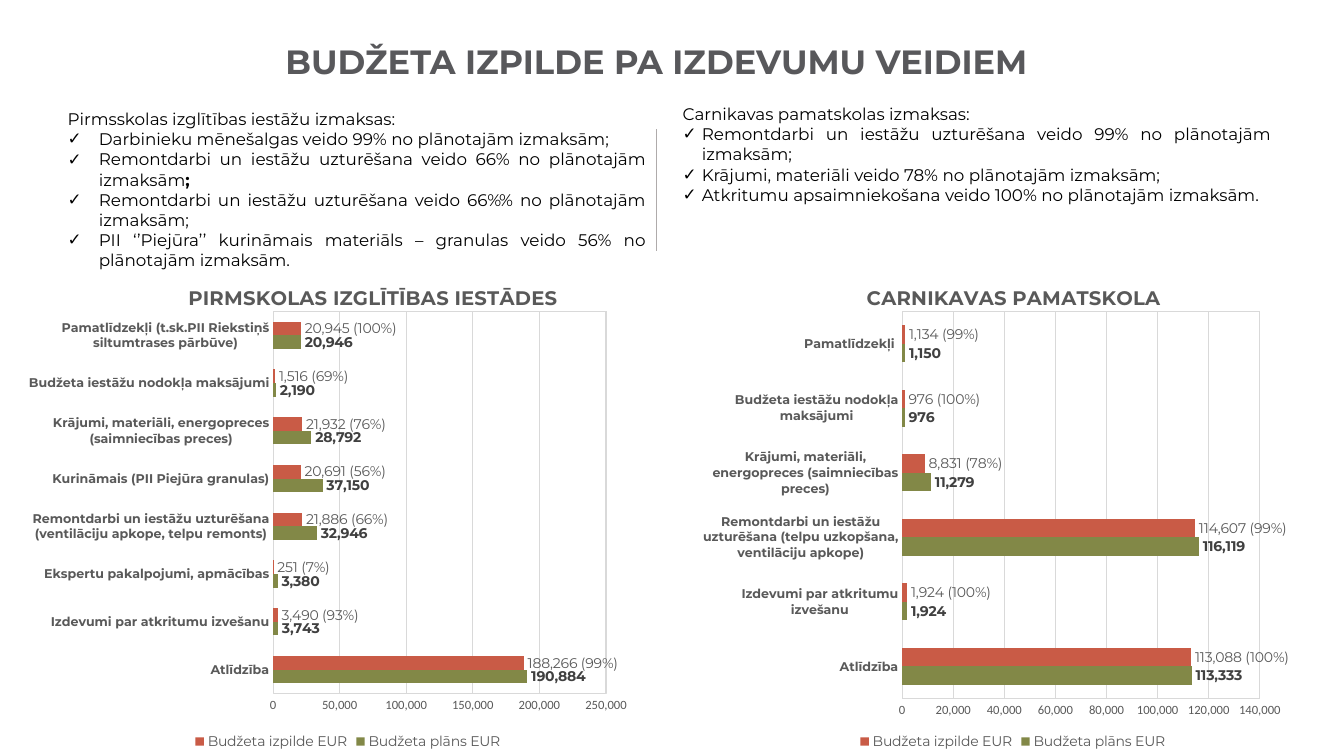
import pptx
import pptx.chart.data
import pptx.dml.color
import pptx.enum.chart
import pptx.enum.shapes
import pptx.enum.text
import pptx.oxml
import pptx.oxml.ns
import pptx.util

COLORS = {"title": "58585B", "black": "000000", "grey": "595959", "label": "404040",
          "grid": "D9D9D9", "divider": "AFABAB", "plan": "828847", "actual": "C95B46"}

FONTS = {
    "title": dict(name="Montserrat", size=24, bold=True, color="title"),
    "body": dict(name="Montserrat", size=12, bold=False, color="black"),
    "strong": dict(name="Montserrat", size=12, bold=True, color="black"),
    "chart": dict(name="Calibri", size=10, color="black"),
    "chart title": dict(name="Montserrat", size=14, bold=True, color="grey"),
    "category": dict(name="Montserrat", size=9, bold=True, color="grey"),
    "value": dict(name="Calibri", size=9, bold=False, color="grey"),
    "legend": dict(name="Montserrat", size=10, bold=False, color="grey"),
    "plan label": dict(name="Montserrat", size=10, bold=True, color="label"),
    "actual label": dict(name="Montserrat", size=10, bold=False, color="grey"),
}

ALIGN = pptx.enum.text.PP_ALIGN
ANCHOR = pptx.enum.text.MSO_ANCHOR
OUTSIDE_END = pptx.enum.chart.XL_LABEL_POSITION.OUTSIDE_END
NO_TICK = pptx.enum.chart.XL_TICK_MARK.NONE
NUMBER = "#,##0"


def rgb(name):
    return pptx.dml.color.RGBColor.from_string(COLORS[name])


def assign(obj, **values):
    for key, value in values.items():
        setattr(obj, key, value)


def set_font(font, style):
    for key, value in FONTS[style].items():
        if key == "color":
            font.color.rgb = rgb(value)
        else:
            setattr(font, key, pptx.util.Pt(value) if key == "size" else value)


def add_xml(parent, xml, index=None):
    prefix, rest = xml.split(":", 1)
    cut = min(i for i in (rest.find(" "), rest.find(">"), rest.find("/")) if i > 0)
    ns = pptx.oxml.ns.nsdecls("a", "c")
    element = pptx.oxml.parse_xml(f"{prefix}:{rest[:cut]} {ns}{rest[cut:]}")
    parent.insert(len(parent) if index is None else index, element)


def set_layout(parent, index, **shares):
    for old in parent.findall(pptx.oxml.ns.qn("c:layout")):
        parent.remove(old)
    target = '<c:layoutTarget val="inner"/>' if "w" in shares else ""
    modes = "".join(f'<c:{k}Mode val="edge"/>' for k in "xy")
    sizes = "".join(f'<c:{k} val="{v}"/>' for k, v in shares.items())
    add_xml(parent, f"<c:layout><c:manualLayout>{target}{modes}{sizes}"
                    "</c:manualLayout></c:layout>", index)


class BudgetSlide:
    """Slide on a grid of 100 columns by 100 rows."""

    def __init__(self, prs, layout):
        self.col, self.row = prs.slide_width / 100, prs.slide_height / 100
        self.s = prs.slides.add_slide(prs.slide_layouts[layout])

    def grid(self, x, y, w, h):
        return [round(n * unit) for n, unit in
                zip((x, y, w, h), (self.col, self.row) * 2)]

    def placeholder(self, idx, box, anchor):
        sp = self.s.placeholders[idx]
        assign(sp, **dict(zip(("left", "top", "width", "height"), self.grid(*box))))
        tf = sp.text_frame
        assign(tf, word_wrap=True, vertical_anchor=anchor,
               auto_size=pptx.enum.text.MSO_AUTO_SIZE.NONE)
        return tf

    def run(self, p, text, style):
        r = p.add_run()
        r.text = text
        set_font(r.font, style)

    def title(self, text, box):
        p = self.placeholder(0, box, ANCHOR.MIDDLE).paragraphs[0]
        assign(p, alignment=ALIGN.CENTER, line_spacing=0.9)
        self.run(p, text, "title")

    def checklist(self, idx, box, heading, items, indent):
        tf = self.placeholder(idx, box, ANCHOR.TOP)
        hang = pptx.util.Inches(indent)
        for i, item in enumerate([heading, *items]):
            p = tf.add_paragraph() if i else tf.paragraphs[0]
            assign(p, alignment=ALIGN.JUSTIFY, space_before=pptx.util.Pt(0))
            pPr = p._p.get_or_add_pPr()
            pPr.set("marL", str(hang if i else 0))
            pPr.set("indent", str(-hang if i else 0))
            add_xml(pPr, '<a:buChar char="✓"/>' if i else "<a:buNone/>")
            runs = [(item, "body")] if isinstance(item, str) else item
            for text, style in runs:
                self.run(p, text, style)

    def divider(self, x, top, bottom):
        x1, y1, x2, y2 = self.grid(x, top, x, bottom)
        line = self.s.shapes.add_connector(
            pptx.enum.shapes.MSO_CONNECTOR.STRAIGHT, x1, y1, x2, y2)
        line.line.color.rgb = rgb("divider")
        line.line.width = pptx.util.Pt(0.5)
        add_xml(line._element.spPr, "<a:effectLst/>")

    def bar_chart(self, box, title, title_at, plot_at, rows, top, step):
        data = pptx.chart.data.CategoryChartData(number_format=NUMBER)
        names, plan, actual, percents = zip(*rows)
        data.categories = names
        data.add_series("Budžeta plāns EUR", plan)
        data.add_series("Budžeta izpilde EUR", actual)
        chart = self.s.shapes.add_chart(
            pptx.enum.chart.XL_CHART_TYPE.BAR_CLUSTERED, *self.grid(*box), data).chart
        set_font(chart.font, "chart")

        # Title and legend
        chart.has_title = chart.has_legend = True
        self.run(chart.chart_title.text_frame.paragraphs[0], title, "chart title")
        set_layout(chart.chart_title._element, 1, **dict(zip("xy", title_at)))
        assign(chart.legend, include_in_layout=False,
               position=pptx.enum.chart.XL_LEGEND_POSITION.BOTTOM)
        set_font(chart.legend.font, "legend")

        # Axes
        for axis, style in ((chart.category_axis, "category"), (chart.value_axis, "value")):
            assign(axis, major_tick_mark=NO_TICK, minor_tick_mark=NO_TICK)
            axis.format.line.fill.background()
            set_font(axis.tick_labels.font, style)
        assign(chart.value_axis, minimum_scale=0, maximum_scale=top, major_unit=step,
               has_major_gridlines=True)
        assign(chart.value_axis.tick_labels, number_format=NUMBER,
               number_format_is_linked=False)
        gridline = chart.value_axis.major_gridlines.format.line
        gridline.color.rgb = rgb("grid")
        gridline.width = pptx.util.Pt(0.75)

        # Bars and their labels
        plot = chart.plots[0]
        assign(plot, gap_width=150, overlap=0, vary_by_categories=False)
        for series, color in zip(plot.series, ("plan", "actual")):
            series.format.fill.solid()
            series.format.fill.fore_color.rgb = rgb(color)
            labels = series.data_labels
            assign(labels, show_value=True, position=OUTSIDE_END,
                   number_format=NUMBER, number_format_is_linked=False)
            set_font(labels.font, "plan label")
        for i, (value, percent) in enumerate(zip(actual, percents)):
            label = plot.series[1].points[i].data_label
            self.run(label.text_frame.paragraphs[0], f"{value:,} ({percent}%)", "actual label")
            label.position = OUTSIDE_END

        # Plot area with a thin frame
        area = chart._chartSpace.chart.plotArea
        set_layout(area, 0, **dict(zip("xywh", plot_at)))
        add_xml(area, '<c:spPr><a:noFill/><a:ln w="9525"><a:solidFill><a:srgbClr val="'
                      f'{COLORS["grid"]}"/></a:solidFill></a:ln></c:spPr>')


# Category, plan, actual, percent of plan
PRESCHOOLS = [
    ("Atlīdzība", 190884, 188266, 99),
    ("Izdevumi par atkritumu izvešanu", 3743, 3490, 93),
    ("Ekspertu pakalpojumi, apmācības", 3380, 251, 7),
    ("Remontdarbi un iestāžu uzturēšana (ventilāciju apkope, telpu remonts)", 32946, 21886, 66),
    ("Kurināmais (PII Piejūra granulas)", 37150, 20691, 56),
    ("Krājumi, materiāli, energopreces (saimniecības preces)", 28792, 21932, 76),
    ("Budžeta iestāžu nodokļa maksājumi", 2190, 1516, 69),
    ("Pamatlīdzekļi (t.sk.PII Riekstiņš siltumtrases pārbūve)", 20946, 20945, 100),
]
SCHOOL = [
    ("Atlīdzība", 113333, 113088, 100),
    ("Izdevumi par atkritumu izvešanu", 1924, 1924, 100),
    ("Remontdarbi un iestāžu uzturēšana (telpu uzkopšana, ventilāciju apkope)",
     116119, 114607, 99),
    ("Krājumi, materiāli, energopreces (saimniecības preces)", 11279, 8831, 78),
    ("Budžeta iestāžu nodokļa maksājumi", 976, 976, 100),
    ("Pamatlīdzekļi ", 1150, 1134, 99),
]


def main():
    prs = pptx.Presentation()
    prs.slide_width, prs.slide_height = pptx.util.Inches(13.33), pptx.util.Inches(7.5)
    page = BudgetSlide(prs, 3)

    # Heading and the two lists
    page.title("BUDŽETA IZPILDE PA IZDEVUMU VEIDIEM", (4.58, 5.33, 88.5, 6.27))
    page.checklist(1, (4.28, 13.73, 44.56, 22.93), "Pirmsskolas izglītības iestāžu izmaksas:", [
        "Darbinieku mēnešalgas veido 99% no plānotajām izmaksām;",
        [("Remontdarbi un iestāžu uzturēšana veido 66% no plānotajām izmaksām", "body"),
         (";", "strong")],
        "Remontdarbi un iestāžu uzturēšana veido 66%% no plānotajām izmaksām;",
        "PII ‘’Piejūra’’ kurināmais materiāls – granulas veido 56% no plānotajām izmaksām.",
    ], 0.31)
    page.checklist(2, (50.04, 13.07, 45.31, 14.8), "Carnikavas pamatskolas izmaksas:", [
        "Remontdarbi un iestāžu uzturēšana veido 99% no plānotajām izmaksām;",
        "Krājumi, materiāli veido 78% no plānotajām izmaksām;",
        "Atkritumu apsaimniekošana veido 100% no plānotajām izmaksām.",
    ], 0.19)
    page.divider(48.84, 17.07, 33.2)

    # Charts
    page.bar_chart((0.6, 33.2, 50.56, 66.53), "PIRMSKOLAS IZGLĪTĪBAS IESTĀDES",
                   (0.26, 0.06), (0.39, 0.12, 0.49, 0.76), PRESCHOOLS, 250000, 50000)
    page.bar_chart((51.16, 33.2, 48.39, 66.53), "CARNIKAVAS PAMATSKOLA",
                   (0.27, 0.06), (0.33, 0.12, 0.55, 0.77), SCHOOL, 140000, 20000)
    prs.save("out.pptx")


if __name__ == "__main__":
    main()
